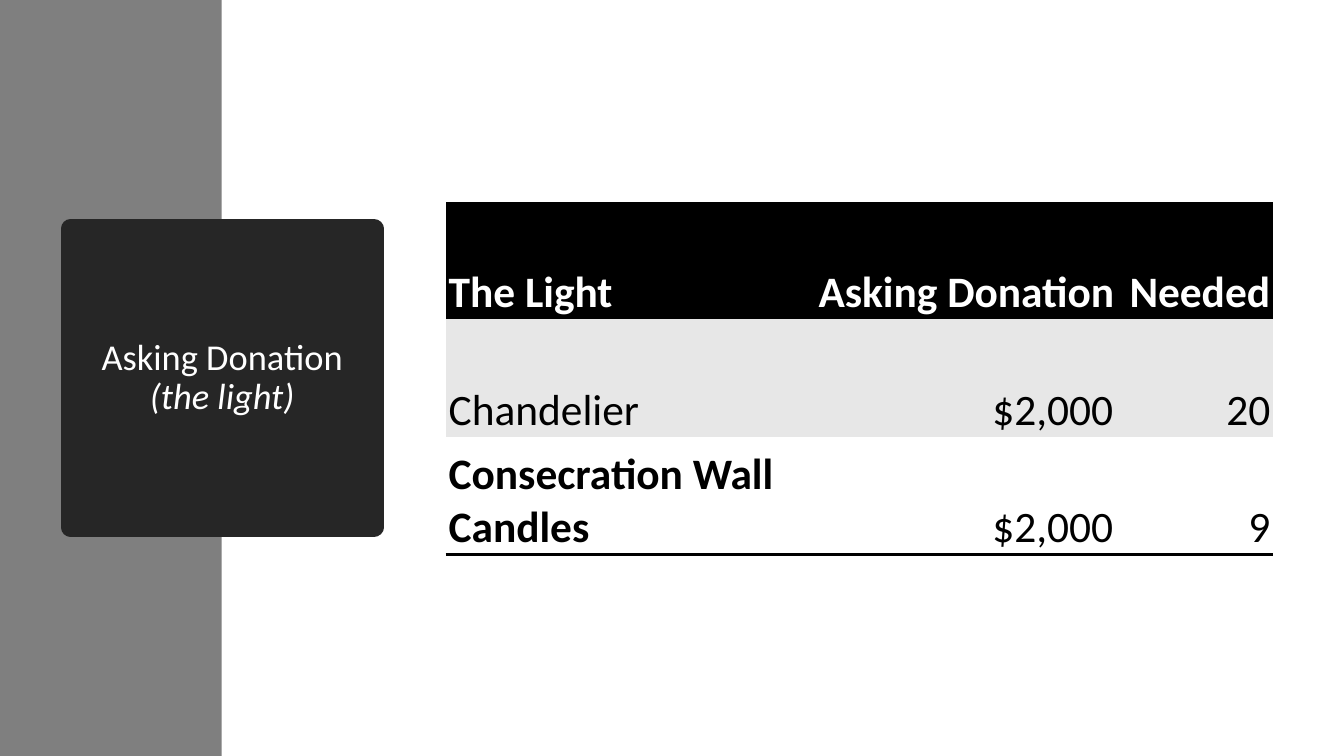
"""Build the slide that lists the asking donations for the light."""
from lxml import etree
from pptx import Presentation
from pptx.dml.color import RGBColor
from pptx.enum.shapes import MSO_SHAPE
from pptx.enum.text import MSO_ANCHOR, MSO_AUTO_SIZE, PP_ALIGN
from pptx.oxml import parse_xml
from pptx.oxml.ns import qn
from pptx.util import Inches, Pt

RECT = MSO_SHAPE.RECTANGLE
MIDDLE, BOTTOM = MSO_ANCHOR.MIDDLE, MSO_ANCHOR.BOTTOM
LEFT, CENTER, RIGHT = PP_ALIGN.LEFT, PP_ALIGN.CENTER, PP_ALIGN.RIGHT
FIXED = MSO_AUTO_SIZE.NONE

WHITE = RGBColor(0xFF, 0xFF, 0xFF)
BLACK = RGBColor(0x00, 0x00, 0x00)
GRAY = RGBColor(0x7F, 0x7F, 0x7F)
DARK = RGBColor(0x26, 0x26, 0x26)
PALE = RGBColor(0xE7, 0xE7, 0xE7)

FONT = "Calibri"
PLAIN = "{2D5ABB26-0587-4C30-8999-92F81FD0307C}"
RULE = (
    '<a:lnB xmlns:a="http://schemas.openxmlformats.org/drawingml/2006/main"'
    ' w="25400"><a:solidFill><a:srgbClr val="000000"/></a:solidFill></a:lnB>'
)
ROWS = (
    ("The Light", "Asking Donation", "Needed"),
    ("Chandelier", "$2,000", "20"),
    ("Consecration Wall Candles", "$2,000", "9"),
)
FILLS = (BLACK, PALE, WHITE)
WIDTHS = (3.58, 3.17, 1.46)


def style(item, values):
    for name, value in values.items():
        setattr(item, name, value)


def ink(font, size, color, **extra):
    style(font, {"name": FONT, "size": Pt(size), **extra})
    font.color.rgb = color


def add_panel(slide, width, color):
    panel = slide.shapes.add_shape(RECT, 0, 0, Inches(width), Inches(7.5))
    panel.shadow.inherit = False
    panel.fill.solid()
    panel.fill.fore_color.rgb = color
    panel.line.fill.background()


def set_title(slide, head, note):
    title = slide.shapes.title
    title.element.getparent().append(title.element)
    style(title, {"left": Inches(0.7), "top": Inches(2.27),
                  "width": Inches(3.01), "height": Inches(2.96)})
    title.fill.solid()
    title.fill.fore_color.rgb = DARK
    title.line.color.rgb = DARK
    title.line.width = Pt(13.75)
    etree.SubElement(title.element.spPr.find(qn("a:ln")), qn("a:round"))
    frame = title.text_frame
    style(frame, {"word_wrap": True, "auto_size": FIXED,
                  "vertical_anchor": MIDDLE})
    para = frame.paragraphs[0]
    style(para, {"alignment": CENTER, "line_spacing": 0.9})
    first = para.add_run()
    first.text = head
    ink(first.font, 26, WHITE)
    para.add_line_break()
    second = para.add_run()
    second.text = note
    ink(second.font, 26, WHITE, italic=True)


def fill_cell(cell, text, row, col):
    is_head, is_last = row == 0, row == len(ROWS) - 1
    pad = 0.13 if col == 1 and not is_head else 0.03
    style(cell, {"text": text, "vertical_anchor": BOTTOM,
                 "margin_left": Inches(0.03), "margin_top": Inches(0.03),
                 "margin_right": Inches(pad), "margin_bottom": 0})
    if is_last:
        cell.fill.background()
        cell.fill._xPr.insert(0, parse_xml(RULE))
    cell.fill.solid()
    cell.fill.fore_color.rgb = FILLS[row]
    para = cell.text_frame.paragraphs[0]
    para.alignment = LEFT if col == 0 else CENTER if is_head else RIGHT
    ink(para.runs[0].font, 31, WHITE if is_head else BLACK,
        bold=is_head or (is_last and col == 0))


def add_grid(slide):
    frame = slide.shapes.add_table(
        len(ROWS), len(WIDTHS), Inches(4.42), Inches(2),
        Inches(sum(WIDTHS)), Inches(3.5))
    table = frame.table
    style(table, {"first_row": False, "horz_banding": False})
    for mark in frame.element.iter(qn("a:tableStyleId")):
        mark.text = PLAIN
    for col, width in zip(table.columns, WIDTHS):
        col.width = Inches(width)
    for row, texts in enumerate(ROWS):
        for col, text in enumerate(texts):
            fill_cell(table.cell(row, col), text, row, col)


def main():
    deck = Presentation()
    style(deck, {"slide_width": Inches(13.33), "slide_height": Inches(7.5)})
    slide = deck.slides.add_slide(deck.slide_layouts[5])
    add_panel(slide, 13.33, WHITE)
    add_panel(slide, 2.2, GRAY)
    set_title(slide, "Asking Donation", "(the light)")
    add_grid(slide)
    deck.save("out.pptx")


if __name__ == "__main__":
    main()
